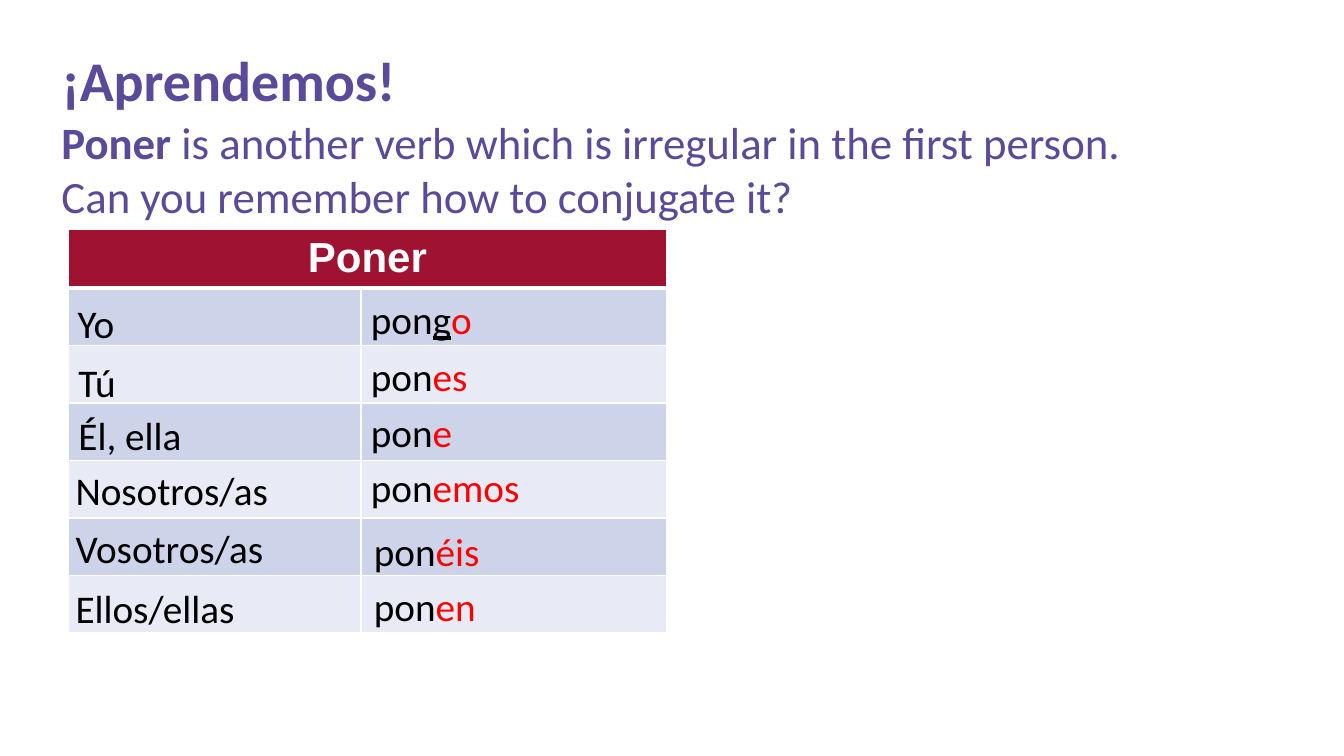
"""Build a slide that conjugates the Spanish verb poner."""
from dataclasses import dataclass

from lxml.etree import SubElement
from pptx import Presentation
from pptx.dml.color import RGBColor
from pptx.enum.text import MSO_ANCHOR, MSO_AUTO_SIZE, PP_ALIGN
from pptx.oxml.ns import qn
from pptx.util import Inches, Pt

COLOURS = {
    "purple": "5B499A",
    "crimson": "9F1231",
    "band_dark": "CDD4EA",
    "band_light": "E8EBF5",
    "white": "FFFFFF",
    "black": "000000",
    "red": "FF0000",
}
SLIDE_WIDTH = Inches(13.33)
SLIDE_HEIGHT = Inches(7.5)
TABLE_LEFT, TABLE_TOP = 5.1, 30.4
COLUMN_WIDTHS = (21.76, 22.73)
HEADER_HEIGHT, ROW_HEIGHT = 7.73, 7.6
PRONOUN_WIDTH, VERB_WIDTH = 20.3, 15.9


@dataclass(frozen=True)
class Span:
    text: str
    colour: str = "black"
    bold: bool = False
    underline: bool = False


@dataclass(frozen=True)
class Label:
    left: float
    top: float
    width: float
    spans: tuple[Span, ...]


def ending(text: str) -> tuple[Span, ...]:
    """Return the verb stem followed by a red ending."""
    return Span("pon"), Span(text, "red")


PRONOUNS = (
    Label(5.03, 38.93, PRONOUN_WIDTH, (Span("Yo"),)),
    Label(5.1, 46.8, PRONOUN_WIDTH, (Span("Tú"),)),
    Label(5.1, 53.73, PRONOUN_WIDTH, (Span("Él, ella"),)),
    Label(4.88, 61.07, PRONOUN_WIDTH, (Span("Nosotros/as"),)),
    Label(4.88, 68.67, PRONOUN_WIDTH, (Span("Vosotros/as"),)),
    Label(4.88, 76.67, PRONOUN_WIDTH, (Span("Ellos/ellas"),)),
)
VERBS = (
    Label(26.86, 38.4, VERB_WIDTH, (Span("pon"), Span("g", underline=True), Span("o", "red"))),
    Label(26.86, 46, VERB_WIDTH, ending("es")),
    Label(26.86, 53.33, VERB_WIDTH, ending("e")),
    Label(26.86, 60.67, VERB_WIDTH, ending("emos")),
    Label(27.08, 69.07, VERB_WIDTH, ending("éis")),
    Label(27.08, 76.4, VERB_WIDTH, ending("en")),
)
INTRODUCTION = (
    (
        Span("Poner ", "purple", bold=True),
        Span("is another verb which is irregular in the first person.", "purple"),
    ),
    (Span("Can you remember how to conjugate it?", "purple"),),
)


def across(percent: float) -> int:
    """Return a share of the slide's width."""
    return round(SLIDE_WIDTH * percent / 100)


def down(percent: float) -> int:
    """Return a share of the slide's height."""
    return round(SLIDE_HEIGHT * percent / 100)


def rgb(name: str) -> RGBColor:
    """Return a named colour."""
    return RGBColor.from_string(COLOURS[name])


def write(para, spans: tuple[Span, ...], size: float, font: str = "Calibri") -> None:
    """Add spans to a paragraph run by run."""
    for span in spans:
        run = para.add_run()
        run.text = span.text
        run.font.name = font
        run.font.size = Pt(size)
        run.font.bold = span.bold
        run.font.underline = span.underline
        run.font.color.rgb = rgb(span.colour)


def add_box(page, left: float, top: float, width: float, height: float,
            lines: tuple[tuple[Span, ...], ...], size: float) -> None:
    """Add a wrapping text box with one paragraph for each line."""
    box = page.shapes.add_textbox(across(left), down(top), across(width), down(height))
    frame = box.text_frame
    frame.word_wrap = True
    for index, spans in enumerate(lines):
        para = frame.add_paragraph() if index else frame.paragraphs[0]
        write(para, spans, size)


def format_cell(cell, fill: str, bottom_width: float = 1) -> None:
    """Fill a cell and give it white borders."""
    cell.fill.solid()
    cell.fill.fore_color.rgb = rgb(fill)
    properties = cell._tc.get_or_add_tcPr()
    for index, side in enumerate("LRTB"):
        width = bottom_width if side == "B" else 1
        line = SubElement(properties, qn(f"a:ln{side}"), w=str(Pt(width)))
        paint = SubElement(line, qn("a:solidFill"))
        SubElement(paint, qn("a:srgbClr"), val=COLOURS["white"])
        properties.insert(index, line)


def add_verb_table(page) -> None:
    """Add the banded table with its merged header."""
    table = page.shapes.add_table(
        len(VERBS) + 1, len(COLUMN_WIDTHS), across(TABLE_LEFT), down(TABLE_TOP),
        across(sum(COLUMN_WIDTHS)), down(HEADER_HEIGHT + len(VERBS) * ROW_HEIGHT),
    ).table
    for column, width in zip(table.columns, COLUMN_WIDTHS):
        column.width = across(width)
    for index, row in enumerate(table.rows):
        row.height = down(ROW_HEIGHT if index else HEADER_HEIGHT)
        band = "band_dark" if index % 2 else "band_light"
        for cell in row.cells:
            format_cell(cell, band if index else "crimson", 1 if index else 3)
    header = table.cell(0, 0)
    header.merge(table.cell(0, 1))
    header.margin_left = header.margin_right = Inches(0.08)
    para = header.text_frame.paragraphs[0]
    para.alignment = PP_ALIGN.CENTER
    write(para, (Span("Poner", "white", bold=True),), 30, "Arial")


def format_title(page) -> None:
    """Place and write the slide's title."""
    title = page.shapes.title
    title.left, title.top = across(3.83), down(5.33)
    title.width, title.height = across(86.27), down(9.07)
    frame = title.text_frame
    frame.word_wrap = True
    frame.auto_size = MSO_AUTO_SIZE.NONE
    frame.vertical_anchor = MSO_ANCHOR.TOP
    para = frame.paragraphs[0]
    para.alignment = PP_ALIGN.LEFT
    para.line_spacing = 1.0
    write(para, (Span("¡Aprendemos!", "purple", bold=True),), 40)


def main() -> None:
    """Build and save the deck."""
    deck = Presentation()
    deck.slide_width, deck.slide_height = SLIDE_WIDTH, SLIDE_HEIGHT
    page = deck.slides.add_slide(deck.slide_layouts.get_by_name("Title Only"))
    format_title(page)
    add_verb_table(page)
    for label in PRONOUNS + VERBS:
        add_box(page, label.left, label.top, label.width, ROW_HEIGHT, (label.spans,), 28)
    add_box(page, 3.83, 14.53, 95, 16.4, INTRODUCTION, 32)
    deck.save("out.pptx")


if __name__ == "__main__":
    main()
